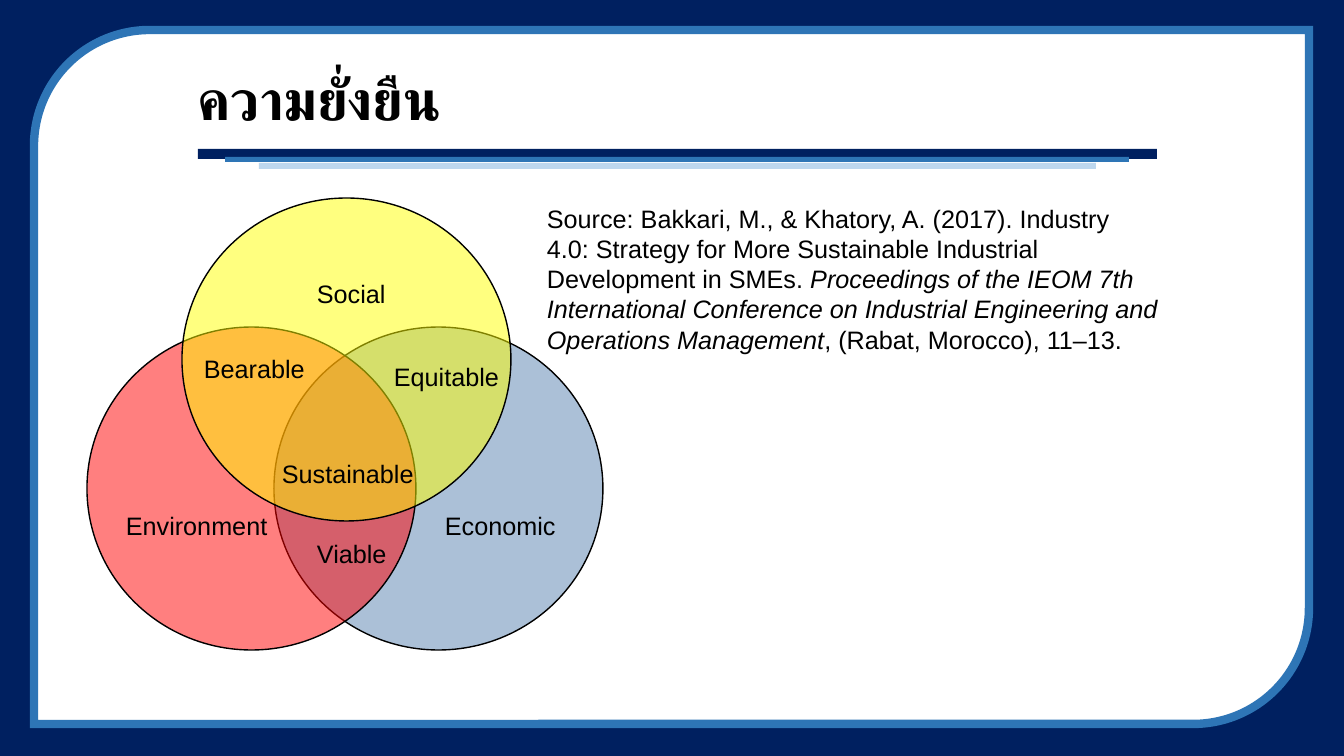
import dataclasses
import typing

import lxml.etree
import pptx
import pptx.dml.color
import pptx.enum.shapes
import pptx.enum.text
import pptx.oxml.ns
import pptx.shapes.autoshape
import pptx.slide
import pptx.util

RGBColor = pptx.dml.color.RGBColor
Shape = pptx.enum.shapes.MSO_SHAPE
Anchor = pptx.enum.text.MSO_ANCHOR

NAVY = RGBColor(0x00, 0x20, 0x60)
BLUE = RGBColor(0x2E, 0x75, 0xB6)
PALE_BLUE = RGBColor(0xBD, 0xD7, 0xEE)
STEEL = RGBColor(0x59, 0x83, 0xB0)
RED = RGBColor(0xFF, 0x00, 0x00)
YELLOW = RGBColor(0xFF, 0xFF, 0x00)
WHITE = RGBColor(0xFF, 0xFF, 0xFF)
BLACK = RGBColor(0x00, 0x00, 0x00)

EMU_PER_PX = 914400 / 100.8
SLIDE_WIDTH, SLIDE_HEIGHT = 1344, 756
CIRCLE_WIDTH, CIRCLE_HEIGHT = 329, 323
NO_BREAK_SPACE = chr(160)
BODY_FORMAT = {"name": "Arial", "size": pptx.util.Pt(18)}
TITLE_FORMAT = {"name": "Arial", "size": pptx.util.Pt(40), "bold": True}
ITALIC = {"italic": True}


@dataclasses.dataclass(frozen=True)
class Area:
    left: int
    top: int
    width: int
    height: int

    def emu(self) -> list[int]:
        return [round(value * EMU_PER_PX) for value in dataclasses.astuple(self)]


@dataclasses.dataclass(frozen=True)
class Filled:
    area: Area
    color: RGBColor
    kind: Shape = Shape.RECTANGLE
    line_color: typing.Optional[RGBColor] = None
    line_points: int = 0
    opacity: int = 100


@dataclasses.dataclass(frozen=True)
class Span:
    text: str
    formats: dict[str, typing.Any] = dataclasses.field(default_factory=dict)


@dataclasses.dataclass(frozen=True)
class Label:
    text: str
    area: Area


def circle(left: int, top: int, color: RGBColor) -> Filled:
    area = Area(left, top, CIRCLE_WIDTH, CIRCLE_HEIGHT)
    return Filled(area, color, Shape.OVAL, BLACK, 1, 50)


BACKDROP = Filled(Area(0, 0, SLIDE_WIDTH, SLIDE_HEIGHT), NAVY)
FRAME = Filled(
    Area(34, 30, 1275, 694), WHITE, Shape.ROUND_2_DIAG_RECTANGLE, BLUE, 6
)
TITLE_BARS = [
    Filled(Area(198, 149, 959, 10), NAVY),
    Filled(Area(225, 157, 904, 5), BLUE),
    Filled(Area(259, 163, 837, 6), PALE_BLUE),
]
CIRCLES = [circle(274, 327, STEEL), circle(87, 327, RED), circle(182, 198, YELLOW)]
LABELS = [
    Label("Social", Area(307, 273, 90, 36)),
    Label("Environment", Area(116, 505, 170, 38)),
    Label("Economic", Area(435, 505, 144, 38)),
    Label("Bearable", Area(194, 348, 127, 40)),
    Label("Equitable", Area(384, 356, 133, 38)),
    Label("Viable", Area(307, 533, 96, 38)),
    Label("Sustainable", Area(272, 453, 158, 36)),
]
CITATION = [
    [
        Span(
            "Source: Bakkari, M., & Khatory, A. (2017). Industry "
            f"4.0:{NO_BREAK_SPACE}Strategy for More Sustainable Industrial "
            f"Development{NO_BREAK_SPACE}in SMEs. "
        ),
        Span(
            f"Proceedings of the IEOM 7th International{NO_BREAK_SPACE}Conference "
            "on Industrial Engineering and",
            ITALIC,
        ),
    ],
    [Span("Operations Management", ITALIC), Span(", (Rabat, Morocco), 11–13.")],
]


def add_filled(
    slide: pptx.slide.Slide, item: Filled
) -> pptx.shapes.autoshape.Shape:
    shape = slide.shapes.add_shape(item.kind, *item.area.emu())
    shape.shadow.inherit = False
    shape.fill.solid()
    shape.fill.fore_color.rgb = item.color
    if item.opacity < 100:
        color = next(shape.fill._xPr.iter(pptx.oxml.ns.qn("a:srgbClr")))
        alpha = lxml.etree.SubElement(color, pptx.oxml.ns.qn("a:alpha"))
        alpha.set("val", str(item.opacity * 1000))
    if item.line_color is None:
        shape.line.fill.background()
    else:
        shape.line.color.rgb = item.line_color
        shape.line.width = pptx.util.Pt(item.line_points)
        outline = next(shape.element.iter(pptx.oxml.ns.qn("a:ln")))
        miter = lxml.etree.SubElement(outline, pptx.oxml.ns.qn("a:miter"))
        miter.set("lim", "800000")
    return shape


def add_text(
    slide: pptx.slide.Slide,
    area: Area,
    paragraphs: list[list[Span]],
    font_format: dict[str, typing.Any],
    frame_format: typing.Optional[dict[str, typing.Any]] = None,
) -> None:
    frame = slide.shapes.add_textbox(*area.emu()).text_frame
    for name, value in {"word_wrap": True, **(frame_format or {})}.items():
        setattr(frame, name, value)
    for index, spans in enumerate(paragraphs):
        para = frame.add_paragraph() if index else frame.paragraphs[0]
        for span in spans:
            run = para.add_run()
            run.text = span.text
            run.font.color.rgb = BLACK
            for name, value in {**font_format, **span.formats}.items():
                setattr(run.font, name, value)


def main() -> None:
    deck = pptx.Presentation()
    deck.slide_width = round(SLIDE_WIDTH * EMU_PER_PX)
    deck.slide_height = round(SLIDE_HEIGHT * EMU_PER_PX)
    slide = deck.slides.add_slide(deck.slide_layouts[6])

    add_filled(slide, BACKDROP)
    frame = add_filled(slide, FRAME)
    frame.adjustments[0] = 0.167
    frame.adjustments[1] = 0
    for bar in TITLE_BARS:
        add_filled(slide, bar)

    margins = ("margin_left", "margin_top", "margin_right", "margin_bottom")
    title_frame = {"vertical_anchor": Anchor.MIDDLE, **dict.fromkeys(margins, 0)}
    title_area = Area(198, 49, 960, 98)
    add_text(slide, title_area, [[Span("ความยั่งยืน")]], TITLE_FORMAT, title_frame)

    for item in CIRCLES:
        add_filled(slide, item)
    for label in LABELS:
        add_text(slide, label.area, [[Span(label.text)]], BODY_FORMAT)
    add_text(slide, Area(537, 198, 638, 151), CITATION, BODY_FORMAT)
    deck.save("out.pptx")


if __name__ == "__main__":
    main()
